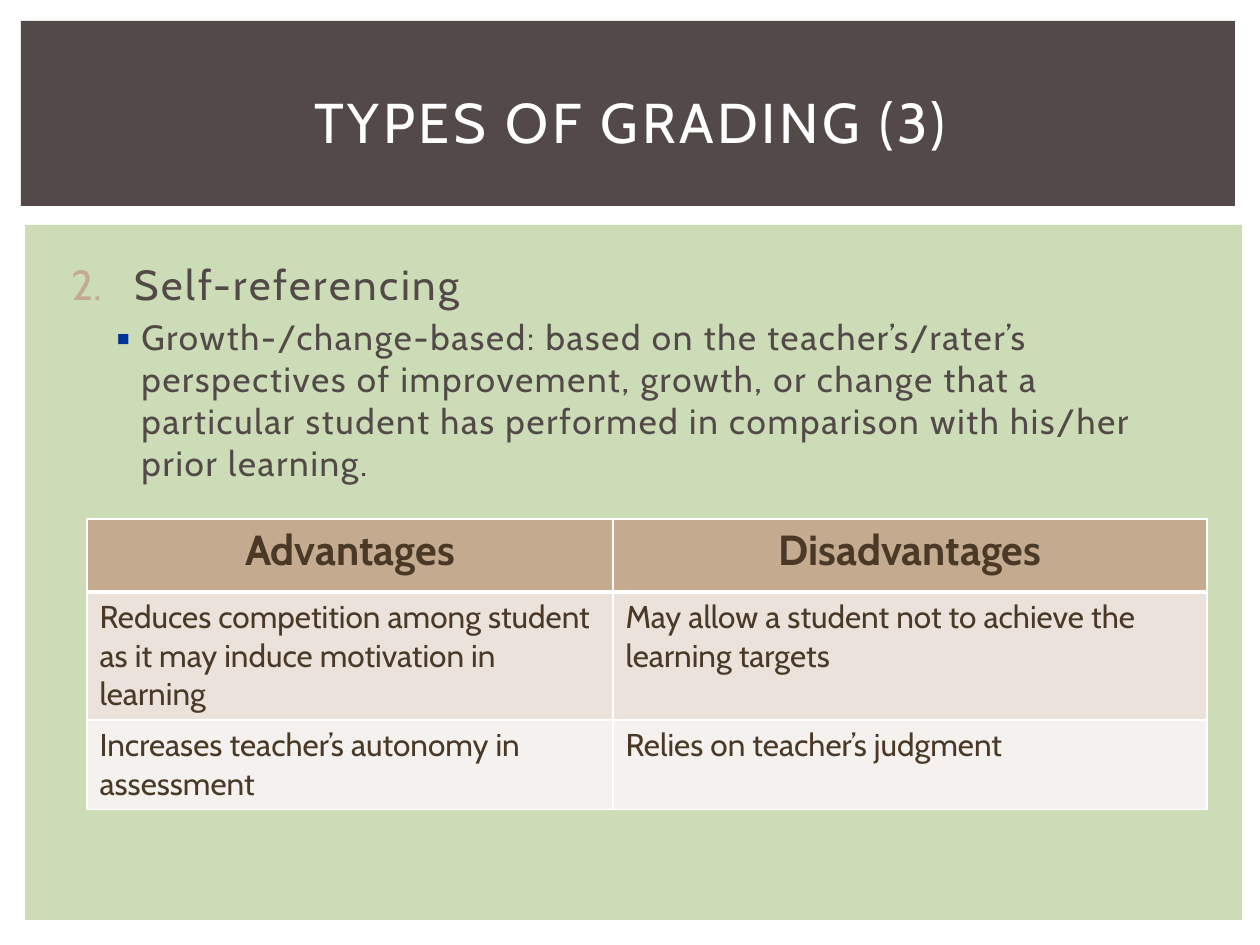
from lxml.etree import SubElement
from pptx import Presentation
from pptx.dml.color import RGBColor
from pptx.enum.shapes import MSO_SHAPE
from pptx.enum.text import MSO_ANCHOR, PP_ALIGN
from pptx.oxml.ns import qn
from pptx.util import Emu, Pt

FONT = "Cabin"
WHITE = RGBColor(0xFF, 0xFF, 0xFF)
SLATE = RGBColor(0x53, 0x49, 0x49)
GREEN = RGBColor(0xCB, 0xDC, 0xB6)
TAN = RGBColor(0xC4, 0xAB, 0x8F)
BLUE = RGBColor(0x00, 0x33, 0x99)
BROWN = RGBColor(0x4A, 0x39, 0x27)
BAND_DARK = RGBColor(0xEA, 0xE2, 0xDB)
BAND_LIGHT = RGBColor(0xF5, 0xF1, 0xEE)

ROWS = [
    ("Advantages", "Disadvantages"),
    ("Reduces competition among student as it may induce motivation in learning",
     "May allow a student not to achieve the learning targets"),
    ("Increases teacher’s autonomy in assessment", "Relies on teacher’s judgment"),
]


def px(n):
    return Emu(round(n * 914400 / 126))


def place(sp, x, y, w, h):
    sp.left, sp.top, sp.width, sp.height = px(x), px(y), px(w), px(h)


def add_run(p, text, size, color, bold=False, spacing=0):
    r = p.add_run()
    r.text = text
    f = r.font
    f.name, f.size, f.bold = FONT, Pt(size), bold
    f.color.rgb = color
    if spacing:
        f._element.set("spc", str(spacing))


def add_panel(s, x, y, w, h, color):
    sp = s.shapes.add_shape(MSO_SHAPE.RECTANGLE, px(x), px(y), px(w), px(h))
    sp.shadow.inherit = False
    sp.fill.solid()
    sp.fill.fore_color.rgb = color
    sp.line.fill.background()


def set_bullet(p, margin, indent, color, tag, **attrs):
    pPr = p._p.get_or_add_pPr()
    pPr.set("marL", str(px(margin)))
    pPr.set("indent", str(px(indent)))
    clr = SubElement(pPr, qn("a:buClr"))
    SubElement(clr, qn("a:srgbClr"), val=str(color))
    SubElement(pPr, qn("a:buFont"), typeface=FONT)
    SubElement(pPr, qn(tag), **attrs)


def add_title(s, x, y, w, h):
    add_panel(s, x, y, w, h, SLATE)
    title = s.shapes.title
    s.shapes._spTree.append(title._element)
    place(title, x + 32, y + 28, w - 59, h - 40)
    tf = title.text_frame
    tf.vertical_anchor = MSO_ANCHOR.MIDDLE
    p = tf.paragraphs[0]
    p.alignment = PP_ALIGN.CENTER
    add_run(p, "TYPES OF GRADING (3)", 32, WHITE, spacing=200)


def add_body(s, x, y, w, h):
    add_panel(s, x, y, w, h, GREEN)
    tf = s.shapes.add_textbox(px(x + 28), px(y + 27), px(w - 59), px(h - 88)).text_frame
    tf.word_wrap = True
    p = tf.paragraphs[0]
    set_bullet(p, 69, -63, TAN, "a:buAutoNum", type="arabicPeriod", startAt="2")
    add_run(p, "Self-referencing", 24, SLATE, spacing=150)
    p = tf.add_paragraph()
    p.level = 1
    set_bullet(p, 76, -25, BLUE, "a:buChar", char="▪")
    p.space_before = Pt(4)
    add_run(p, "Growth-/change-based: based on the teacher’s/rater’s perspectives of "
               "improvement, growth, or change that a particular student has performed "
               "in comparison with his/her prior learning.", 20, SLATE, spacing=100)


def set_borders(cell, widths):
    tcPr = cell._tc.get_or_add_tcPr()
    for i, (side, width) in enumerate(widths.items()):
        ln = tcPr.makeelement(qn(f"a:ln{side}"), w=str(Pt(width)))
        fill = SubElement(ln, qn("a:solidFill"))
        SubElement(fill, qn("a:srgbClr"), val=str(WHITE))
        tcPr.insert(i, ln)


def add_comparison(s, x, y, col_widths, row_heights):
    table = s.shapes.add_table(len(row_heights), len(col_widths), px(x), px(y),
                               px(sum(col_widths)), px(sum(row_heights))).table
    for col, width in zip(table.columns, col_widths):
        col.width = px(width)
    for row, height in zip(table.rows, row_heights):
        row.height = px(height)
    for i, (texts, color) in enumerate(zip(ROWS, (TAN, BAND_DARK, BAND_LIGHT))):
        header = i == 0
        for j, text in enumerate(texts):
            cell = table.cell(i, j)
            cell.fill.solid()
            cell.fill.fore_color.rgb = color
            set_borders(cell, {"L": 1, "R": 1, "T": 3 if i == 1 else 1,
                               "B": 3 if header else 1})
            p = cell.text_frame.paragraphs[0]
            p.alignment = PP_ALIGN.CENTER if header else PP_ALIGN.LEFT
            add_run(p, text, 24 if header else 18, BROWN, bold=header)


def main():
    prs = Presentation()
    prs.slide_width, prs.slide_height = px(1260), px(945)
    s = prs.slides.add_slide(prs.slide_layouts[5])
    add_body(s, 25, 225, 1217, 695)
    add_title(s, 21, 21, 1214, 185)
    add_comparison(s, 87, 519, (526, 594), (73, 128, 89))
    prs.save("out.pptx")


if __name__ == "__main__":
    main()
